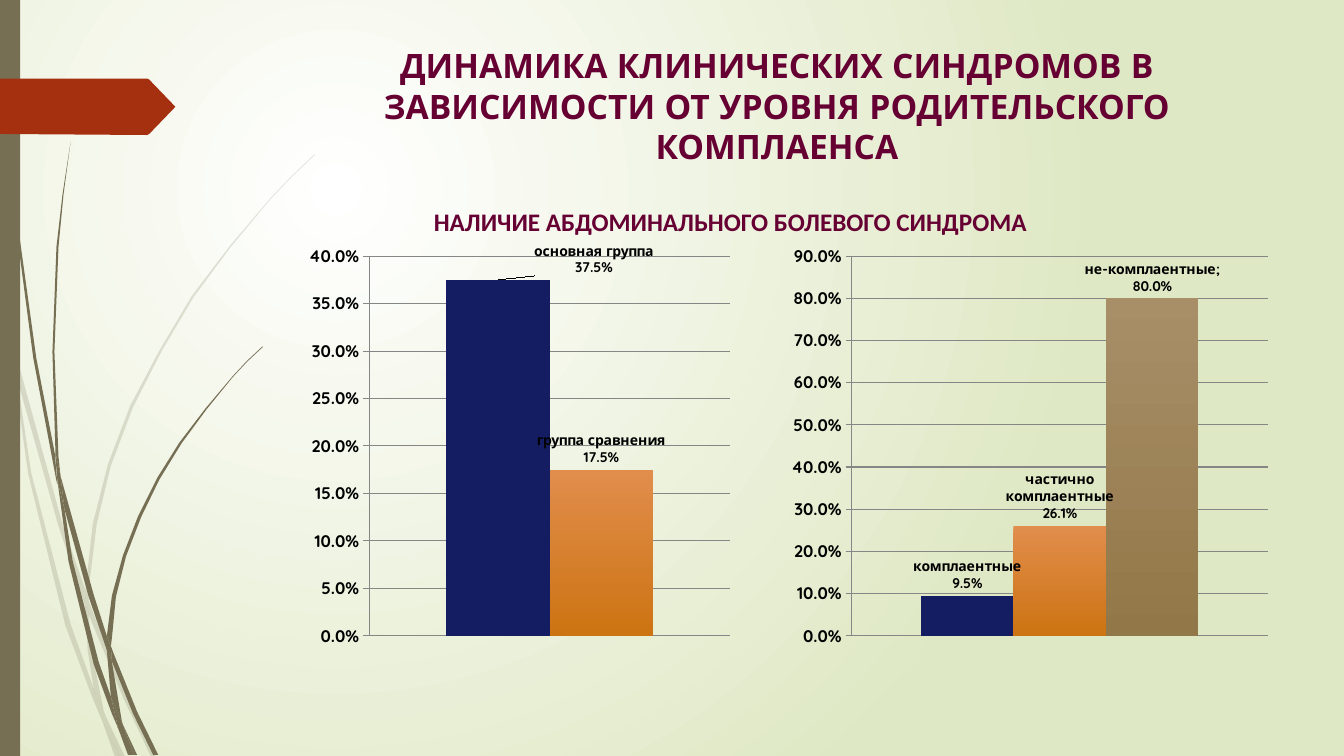
from copy import deepcopy
from lxml import etree
from pptx import Presentation
from pptx.chart.data import CategoryChartData
from pptx.dml.color import RGBColor
from pptx.enum.chart import XL_CHART_TYPE, XL_LABEL_POSITION, XL_TICK_MARK
from pptx.enum.shapes import MSO_SHAPE
from pptx.enum.text import MSO_ANCHOR, PP_ALIGN
from pptx.oxml import parse_xml
from pptx.oxml.ns import nsdecls, qn
from pptx.util import Inches, Pt

WHITE = RGBColor(0xFF, 0xFF, 0xFF)
BLACK = RGBColor(0, 0, 0)
GREEN = RGBColor(0xDF, 0xE8, 0xC4)
OLIVE = RGBColor(0x76, 0x6F, 0x54)
RUST = RGBColor(0xA5, 0x30, 0x10)
WINE = RGBColor(0x66, 0x00, 0x33)
GREY = RGBColor(0x86, 0x86, 0x86)
NAVY = (RGBColor(0x14, 0x1D, 0x62),)
ORANGE = (RGBColor(0xE1, 0x8D, 0x4C), RGBColor(0xCC, 0x73, 0x12))
TAN = (RGBColor(0xA9, 0x8F, 0x68), RGBColor(0x92, 0x77, 0x48))

# Outlines of the grass blades, in inches on the slide
PALE = [
    [(.11, 3.5), (.09, 3.22), (0, 2.82), (0, 2.99), (.1, 3.44)],
    [(.58, 5.22), (.84, 5.99), (.85, 5.86), (.62, 5.2), (.14, 3.45), (.17, 3.76)],
    [(.92, 6.07), (.88, 5.96), (.88, 6.1), (1.23, 6.94), (1.5, 7.51), (1.55, 7.51), (1.27, 6.92)],
    [(1.19, 7.51), (1.24, 7.51), (1.05, 7.11)],
    [(.93, 6.83), (.7, 6.19), (.31, 4.69), (.17, 3.76), (.11, 3.5), (.28, 4.7), (.65, 6.21),
     (.92, 6.93), (1.01, 7.14), (.99, 7.07)],
    [(.84, 5.99), (.87, 6.46), (.93, 6.83), (.96, 6.92), (1.05, 7.11), (1.03, 7.06),
     (.91, 6.46), (.88, 6.1), (.88, 6.08)],
    [(.88, 5.84), (.96, 5.2), (1.1, 4.62), (1.32, 4.04), (1.6, 3.49), (1.92, 2.95), (2.29, 2.45),
     (2.68, 1.98), (2.9, 1.75), (3.12, 1.54), (3.12, 1.53), (2.89, 1.75), (2.68, 1.97),
     (2.28, 2.44), (1.9, 2.94), (1.58, 3.48), (1.29, 4.03), (1.07, 4.61), (.92, 5.2),
     (.85, 5.84), (.85, 5.86), (.88, 5.96)],
    [(1.01, 7.14), (1.14, 7.51), (1.19, 7.51)],
    [(.88, 6.08), (.88, 6.1), (.88, 5.96), (.85, 5.86), (.84, 5.99)],
    [(.96, 6.92), (.93, 6.83), (.99, 7.07), (1.01, 7.14), (1.19, 7.51), (1.05, 7.11)],
]
DARK = [
    [(.07, 1.1), (.17, 2.33), (.33, 3.55), (.56, 4.77), (.57, 4.81), (.55, 4.57), (.55, 4.53),
     (.36, 3.55), (.19, 2.32), (.08, 1.09), (.05, .48), (.04, 0), (.03, 0), (.04, .48)],
    [(.88, 5.92), (1.06, 6.45), (1.06, 6.33), (1.06, 6.31), (.93, 5.9), (.6, 4.72), (.64, 5.05)],
    [(1.13, 6.49), (1.1, 6.41), (1.11, 6.56), (1.32, 7.08), (1.52, 7.49), (1.57, 7.49), (1.36, 7.06)],
    [(1.1, 6.91), (.98, 6.57), (.72, 5.56), (.64, 5.05), (.57, 4.77), (.68, 5.57), (.93, 6.59),
     (1.11, 7.08), (1.17, 7.22), (1.16, 7.17)],
    [(.6, 4.72), (.58, 4.53), (.54, 3.49), (.58, 2.45), (.63, 1.93), (.7, 1.41), (.62, 1.93),
     (.56, 2.45), (.52, 3.49), (.55, 4.49)],
    [(1.33, 7.49), (1.36, 7.49), (1.22, 7.19)],
    [(.57, 4.77), (.64, 5.05), (.6, 4.72), (.55, 4.49), (.55, 4.53)],
    [(1.11, 6.33), (1.15, 5.92), (1.25, 5.52), (1.4, 5.13), (1.58, 4.76), (1.8, 4.4), (2.05, 4.06),
     (2.31, 3.74), (2.45, 3.59), (2.61, 3.44), (2.6, 3.44), (2.45, 3.58), (2.31, 3.73),
     (2.04, 4.05), (1.78, 4.39), (1.56, 4.74), (1.37, 5.12), (1.22, 5.51), (1.11, 5.91),
     (1.06, 6.31), (1.1, 6.41)],
    [(1.17, 7.22), (1.27, 7.49), (1.31, 7.49)],
    [(1.06, 6.45), (1.1, 6.91), (1.16, 7.06), (1.22, 7.19), (1.21, 7.16), (1.11, 6.56), (1.09, 6.51)],
    [(1.06, 6.45), (1.09, 6.51), (1.11, 6.56), (1.1, 6.41), (1.06, 6.31), (1.06, 6.33)],
    [(1.16, 7.06), (1.1, 6.91), (1.16, 7.17), (1.17, 7.22), (1.3, 7.49), (1.33, 7.49), (1.22, 7.19)],
]
TAG = [(1.74, 1.06), (1.48, 1.33), (1.46, 1.34), (0, 1.33), (0, .78), (1.46, .78), (1.48, .79)]


class Deck:
    """Holds the fonts and the current slide."""
    face, plain = "Quicksand", "Calibri"

    def __init__(self):
        self.prs = Presentation()
        self.prs.slide_width, self.prs.slide_height = Inches(13.33), Inches(7.5)
        self.slide = self.prs.slides.add_slide(self.prs.slide_layouts[6])
        self.shapes = self.slide.shapes

    def glow(self, inner, outer):
        """Radial background centred in the upper left quarter."""
        fill = self.slide.background.fill
        self.blend(fill, (inner, outer))
        grad = self.slide.background._cSld.find(".//" + qn("a:gradFill"))
        line = grad.find(qn("a:lin"))
        line.addnext(parse_xml(
            f'<a:path {nsdecls("a")} path="circle">'
            '<a:fillToRect l="50000" t="50000" r="100000" b="100000"/></a:path>'))
        grad.remove(line)

    def blend(self, fill, tones):
        """Solid fill for one tone, top-down gradient for two."""
        if len(tones) == 1:
            fill.solid()
            fill.fore_color.rgb = tones[0]
            return
        fill.gradient()
        fill.gradient_angle = 270
        for place, (stop, tone) in enumerate(zip(fill.gradient_stops, tones)):
            stop.color.rgb, stop.position = tone, place

    def paint(self, shape, color, alpha=100):
        shape.shadow.inherit = False
        self.blend(shape.fill, (color,))
        shape.line.fill.background()
        if alpha < 100:
            tone = shape._element.spPr.find(".//" + qn("a:srgbClr"))
            etree.SubElement(tone, qn("a:alpha")).set("val", str(alpha * 1000))

    def outline(self, shapes, points, color, alpha=100):
        dots = [(Inches(x), Inches(y)) for x, y in points]
        form = shapes.build_freeform(*dots[0])
        form.add_line_segments(dots[1:], close=True)
        self.paint(form.convert_to_shape(), color, alpha)

    def grass(self, blades, alpha):
        group = self.shapes.add_group_shape()
        for blade in blades:
            self.outline(group.shapes, blade, OLIVE, alpha)

    def bar(self, box, color):
        shape = self.shapes.add_shape(MSO_SHAPE.RECTANGLE, *map(Inches, box))
        self.paint(shape, color)

    def text(self, box, words, size, face, anchor=MSO_ANCHOR.TOP, foot=.05):
        frame = self.shapes.add_textbox(*map(Inches, box)).text_frame
        frame.word_wrap = True
        frame.vertical_anchor = anchor
        frame.margin_bottom = Inches(foot)
        para = frame.paragraphs[0]
        para.alignment = PP_ALIGN.CENTER
        run = para.add_run()
        run.text = words
        self.style(run.font, size, face, WINE)

    def style(self, font, size, face, color):
        font.size, font.name, font.bold = Pt(size), face, True
        font.color.rgb = color

    def label(self, series, split, shift):
        """Name and value over a column, moved right by a share of the chart."""
        tags = series.data_labels
        tags.show_series_name = tags.show_value = True
        tags.number_format, tags.number_format_is_linked = "0.0%", False
        tags.position = XL_LABEL_POSITION.OUTSIDE_END
        self.style(tags.font, 10, self.face, BLACK)
        root = tags._element
        mark = etree.Element(qn("c:separator"))
        mark.text = split
        root.find(qn("c:showBubbleSize")).addnext(mark)
        if shift:
            one = parse_xml(
                f'<c:dLbl {nsdecls("c")}><c:idx val="0"/><c:layout><c:manualLayout>'
                f'<c:x val="{shift}"/><c:y val="0"/></c:manualLayout></c:layout></c:dLbl>')
            one.extend(deepcopy(part) for part in root if part.tag != qn("c:showLeaderLines"))
            root.insert(0, one)

    def chart(self, box, top, step, plot, columns):
        data = CategoryChartData(number_format="0.0%")
        data.categories = ["1"]
        for name, value, *_ in columns:
            data.add_series(name, [value])
        chart = self.shapes.add_chart(
            XL_CHART_TYPE.COLUMN_CLUSTERED, *map(Inches, box), data).chart
        chart.has_legend = chart.has_title = False
        self.style(chart.font, 16, self.face, BLACK)
        chart.category_axis.visible = False
        axis = chart.value_axis
        axis.minimum_scale, axis.maximum_scale, axis.major_unit = 0, top, step
        axis.major_tick_mark = XL_TICK_MARK.OUTSIDE
        ticks = axis.tick_labels
        ticks.number_format, ticks.number_format_is_linked = "0.0%", False
        self.style(ticks.font, 12, self.face, BLACK)
        for line in (axis.format.line, axis.major_gridlines.format.line):
            line.color.rgb, line.width = GREY, Pt(.75)
        bars = chart.plots[0]
        bars.gap_width, bars.overlap, bars.vary_by_categories = 150, 0, False
        for series, (_, _, tones, split, shift) in zip(bars.series, columns):
            self.blend(series.format.fill, tones)
            self.label(series, split, shift)
        area = chart._chartSpace.chart.plotArea
        for old in area.findall(qn("c:layout")):
            area.remove(old)
        spots = "".join(f'<c:{key} val="{val}"/>' for key, val in zip("xywh", plot))
        area.insert(0, parse_xml(
            f'<c:layout {nsdecls("c")}><c:manualLayout><c:layoutTarget val="inner"/>'
            '<c:xMode val="edge"/><c:yMode val="edge"/>'
            f'{spots}</c:manualLayout></c:layout>'))


def main():
    deck = Deck()
    deck.glow(WHITE, GREEN)
    deck.grass(PALE, 20)
    deck.grass(DARK, 100)
    deck.bar((0, 0, .2, 7.5), OLIVE)
    deck.outline(deck.shapes, TAG, RUST)
    deck.text((2.83, .4, 9.75, 1.42), "ДИНАМИКА КЛИНИЧЕСКИХ СИНДРОМОВ В ЗАВИСИМОСТИ "
              "ОТ УРОВНЯ РОДИТЕЛЬСКОГО КОМПЛАЕНСА", 24, deck.face)
    deck.text((2.8, 1.91, 8.89, .88), "НАЛИЧИЕ АБДОМИНАЛЬНОГО БОЛЕВОГО СИНДРОМА",
              18, deck.plain, MSO_ANCHOR.BOTTOM, .44)
    deck.chart((2.83, 2.4, 4.75, 4.05), .4, .05, (.175, .035, .754, .93), [
        ("основная группа", .375, NAVY, "\n", .2),
        ("группа сравнения", .175, ORANGE, "\n", 0)])
    deck.chart((7.84, 2.4, 4.74, 4.05), .9, .1, (.128, .035, .872, .93), [
        ("комплаентные", .095, NAVY, "\n", 0),
        ("частично комплаентные", .261, ORANGE, "\n", 0),
        ("не-комплаентные", .8, TAN, "; ", 0)])
    deck.prs.save("out.pptx")


if __name__ == "__main__":
    main()
